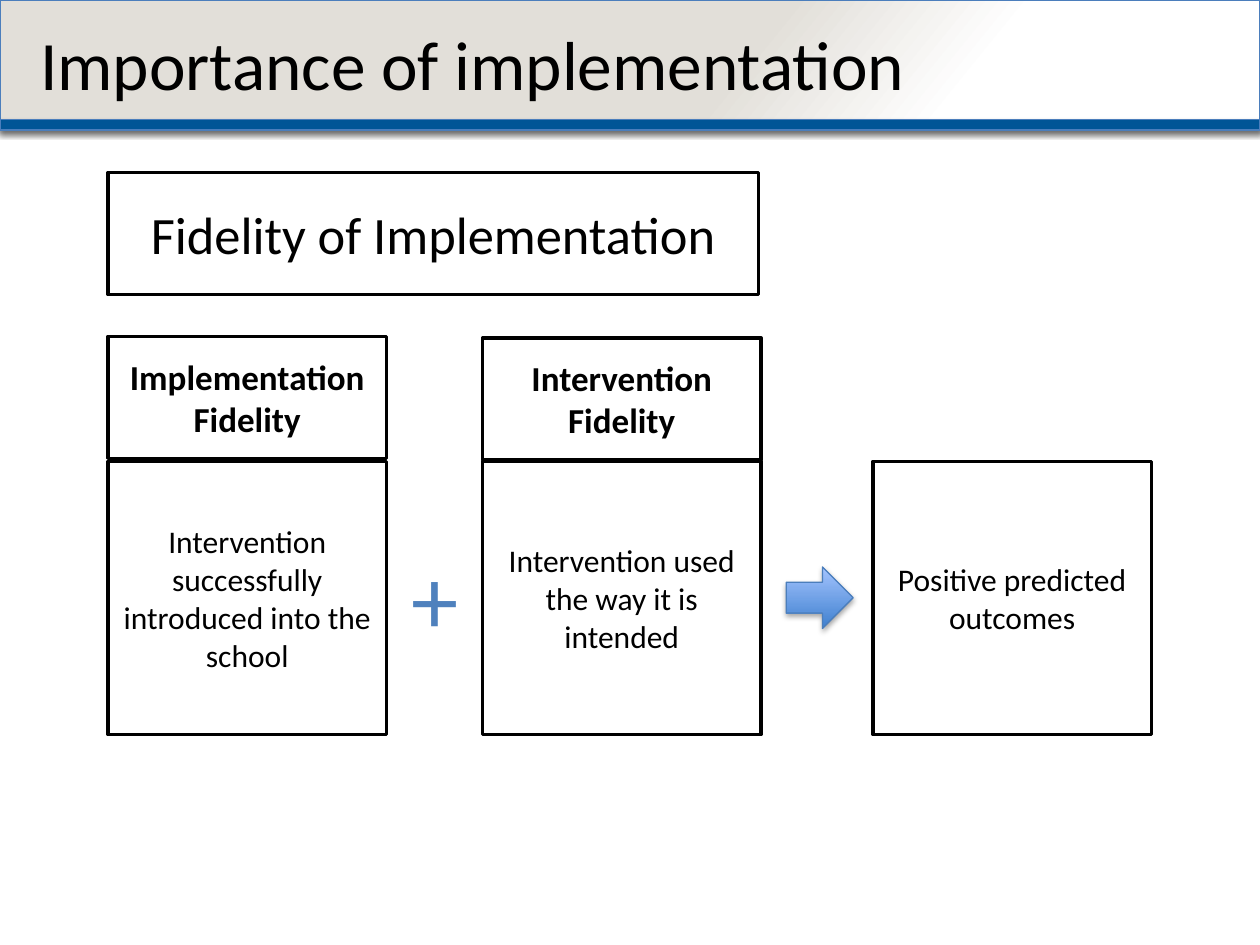
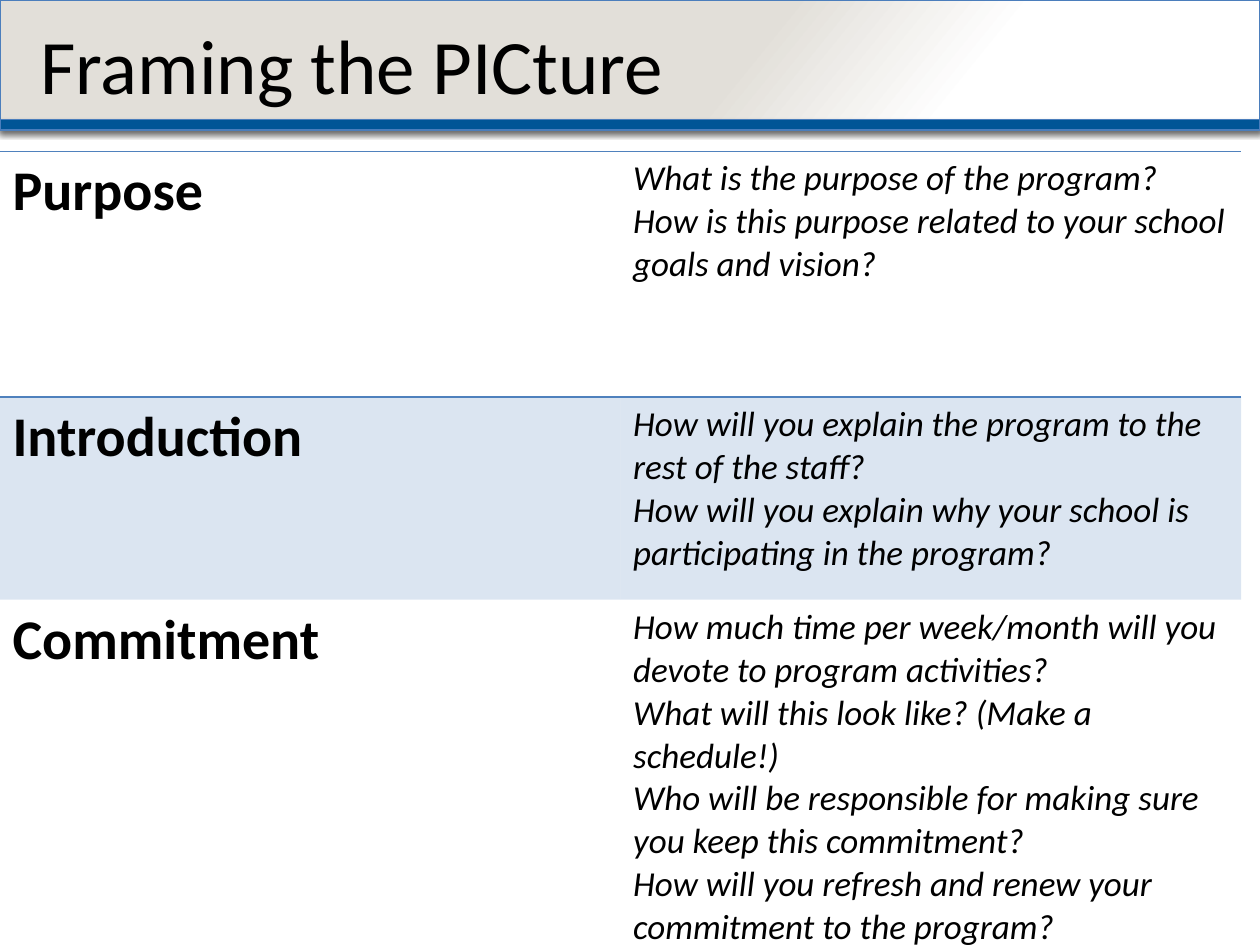
from dataclasses import dataclass

from lxml.etree import SubElement
from pptx import Presentation
from pptx.dml.color import RGBColor
from pptx.enum.shapes import MSO_SHAPE as Preset
from pptx.enum.text import MSO_ANCHOR as Anchor, PP_ALIGN as Align
from pptx.oxml import parse_xml
from pptx.oxml.ns import nsdecls, qn
from pptx.presentation import Presentation as Deck
from pptx.shapes.autoshape import Shape
from pptx.slide import Slide
from pptx.table import _Cell as Cell
from pptx.text.text import TextFrame
from pptx.util import Cm, Pt

FONT = "Calibri"
BLACK = RGBColor(0x00, 0x00, 0x00)
WHITE = RGBColor(0xFF, 0xFF, 0xFF)
SAND = RGBColor(0xE2, 0xDF, 0xD9)
BAND_BLUE = RGBColor(0x00, 0x55, 0x96)
EDGE_BLUE = RGBColor(0x4B, 0x7E, 0xBC)
ACCENT = RGBColor(0x4F, 0x81, 0xBD)
ARROW_DARK = RGBColor(0x3F, 0x80, 0xCE)
ARROW_LIGHT = RGBColor(0xA4, 0xC4, 0xFF)

PAGE_WIDTH, PAGE_HEIGHT = 25.4, 19.05
LEFT, MIDDLE, RIGHT = 2.18, 9.73, 17.6
CARD_WIDTH, CARD_HEIGHT, HEADING_HEIGHT = 5.61, 5.51, 2.46
HEADING_TOP, CARD_TOP = 6.78, 9.3
NO_GRID_STYLE = "{2D5ABB26-0587-4C30-8999-92F81FD0307C}"


@dataclass(frozen=True)
class Place:
    """Position and size in centimetres."""

    left: float
    top: float
    width: float
    height: float

    def lengths(self) -> tuple[Cm, ...]:
        """Return the four lengths in the order python-pptx takes them."""
        return tuple(Cm(n) for n in (self.left, self.top, self.width, self.height))


@dataclass(frozen=True)
class Card:
    """Outlined box with centred text."""

    text: str
    place: Place
    size: float = 18
    bold: bool = False


@dataclass(frozen=True)
class Topic:
    """Table row with a heading and its questions."""

    name: str
    height: float
    questions: tuple[str, ...]
    tinted: bool = False


CARDS = (
    Card("Fidelity of Implementation", Place(LEFT, 3.48, 13.11, HEADING_HEIGHT), 30),
    Card("Intervention successfully introduced into the school",
         Place(LEFT, CARD_TOP, CARD_WIDTH, CARD_HEIGHT)),
    Card("Intervention used the way it is intended",
         Place(MIDDLE, CARD_TOP, CARD_WIDTH, CARD_HEIGHT)),
    Card("Positive predicted outcomes",
         Place(RIGHT, CARD_TOP, CARD_WIDTH, CARD_HEIGHT)),
    Card("Implementation Fidelity",
         Place(LEFT, HEADING_TOP, CARD_WIDTH, HEADING_HEIGHT), 20, True),
    Card("Intervention Fidelity",
         Place(MIDDLE, HEADING_TOP + 0.03, CARD_WIDTH, HEADING_HEIGHT), 20, True),
)

TOPICS = (
    Topic("Purpose", 4.95, (
        "What is the purpose of the program?",
        "How is this purpose related to your school goals and vision?",
    )),
    Topic("Introduction", 4.09, (
        "How will you explain the program to the rest of the staff?",
        "How will you explain why your school is participating in the program?",
    ), tinted=True),
    Topic("Commitment", 6.1, (
        "How much time per week/month will you devote to program activities?",
        "What will this look like? (Make a schedule!)",
        "Who will be responsible for making sure you keep this commitment?",
        "How will you refresh and renew your commitment to the program?",
    )),
)


def write(frame: TextFrame, *texts: str, size: float, bold: bool = False,
          italic: bool = False, color: RGBColor = BLACK,
          align: Align = Align.LEFT) -> None:
    """Fill a text frame with one paragraph for each text."""
    for index, text in enumerate(texts):
        para = frame.add_paragraph() if index else frame.paragraphs[0]
        para.alignment = align
        span = para.add_run()
        span.text = text
        span.font.name = FONT
        span.font.size = Pt(size)
        span.font.bold = bold
        span.font.italic = italic
        span.font.color.rgb = color


def add_box(page: Slide, place: Place, fill: RGBColor = WHITE,
            edge: RGBColor = BLACK, weight: float = 2,
            preset: Preset = Preset.RECTANGLE) -> Shape:
    """Add a filled, outlined shape without shadow."""
    box = page.shapes.add_shape(preset, *place.lengths())
    box.shadow.inherit = False
    box.fill.solid()
    box.fill.fore_color.rgb = fill
    box.line.color.rgb = edge
    box.line.width = Pt(weight)
    return box


def add_raised_box(page: Slide, place: Place, fill: RGBColor,
                   preset: Preset = Preset.RECTANGLE) -> Shape:
    """Add a thinly edged shape with a soft shadow below it."""
    box = add_box(page, place, fill, EDGE_BLUE, 0.75, preset)
    effects = box._element.spPr.find(qn("a:effectLst"))
    shadow = SubElement(effects, qn("a:outerShdw"), blurRad="40000", dist="23000",
                        dir="5400000", rotWithShape="0")
    tone = SubElement(shadow, qn("a:srgbClr"), val=str(BLACK))
    SubElement(tone, qn("a:alpha"), val="35000")
    return box


def set_gradient(box: Shape, angle: float, *stops: tuple[float, RGBColor]) -> None:
    """Give a shape a two-stop gradient, its angle counted anticlockwise."""
    box.fill.gradient()
    box.fill.gradient_angle = angle
    for stop, (position, color) in zip(box.fill.gradient_stops, stops):
        stop.position = position
        stop.color.rgb = color


def add_text(page: Slide, place: Place, text: str, *, size: float,
             color: RGBColor = BLACK, align: Align = Align.LEFT,
             anchor: Anchor = Anchor.TOP, wrap: bool = True) -> None:
    """Add a text box."""
    frame = page.shapes.add_textbox(*place.lengths()).text_frame
    frame.word_wrap = wrap
    frame.vertical_anchor = anchor
    write(frame, text, size=size, color=color, align=align)


def add_page(deck: Deck, title: str, title_size: float) -> Slide:
    """Add a blank slide with the header band and title."""
    page = deck.slides.add_slide(deck.slide_layouts[6])
    header = add_raised_box(page, Place(0, 0, PAGE_WIDTH, 2.62), SAND)
    set_gradient(header, 141, (0.24, WHITE), (0.42, SAND))
    add_raised_box(page, Place(0, 2.41, PAGE_WIDTH, 0.21), BAND_BLUE)
    add_text(page, Place(0.56, 0.13, 19.84, 2.29), title, size=title_size,
             anchor=Anchor.MIDDLE)
    return page


def add_card(page: Slide, card: Card) -> None:
    """Draw a card."""
    frame = add_box(page, card.place).text_frame
    frame.word_wrap = True
    frame.vertical_anchor = Anchor.MIDDLE
    write(frame, card.text, size=card.size, bold=card.bold, align=Align.CENTER)


def add_border(cell: Cell, side: str) -> None:
    """Draw an accent line on the side T or B of a cell."""
    cell._tc.get_or_add_tcPr().append(parse_xml(
        f'<a:ln{side} {nsdecls("a")} w="12700"><a:solidFill>'
        f'<a:srgbClr val="{ACCENT}"/></a:solidFill></a:ln{side}>'))


def style_cell(cell: Cell, borders: str, tinted: bool) -> None:
    """Set the borders and then the fill of a cell."""
    for side in borders:
        add_border(cell, side)
    if not tinted:
        cell.fill.background()
        return
    cell.fill.solid()
    cell.fill.fore_color.rgb = ACCENT
    tone = cell._tc.tcPr.find(f".//{qn('a:srgbClr')}")
    SubElement(tone, qn("a:alpha"), val="20000")


def add_topic_table(page: Slide) -> None:
    """Add the table of topics and questions."""
    place = Place(0, 3.05, 25.02, sum(topic.height for topic in TOPICS))
    table = page.shapes.add_table(len(TOPICS), 2, *place.lengths()).table
    table.first_row = table.horz_banding = False
    table._tbl.tblPr.find(qn("a:tableStyleId")).text = NO_GRID_STYLE
    for row, topic, borders in zip(table.rows, TOPICS, ("TB", "", "B")):
        row.height = Cm(topic.height)
        name, questions = row.cells
        write(name.text_frame, topic.name, size=32, bold=True)
        write(questions.text_frame, *topic.questions, size=20, italic=True)
        for cell in (name, questions):
            style_cell(cell, borders, topic.tinted)


def build_importance(deck: Deck) -> None:
    """Build the slide on the two kinds of fidelity."""
    page = add_page(deck, "Importance of implementation", 39.6)
    for card in CARDS:
        add_card(page, card)
    add_text(page, Place(8.03, 10.77, 1.47, 2.57), "+", size=54, color=ACCENT,
             align=Align.CENTER, wrap=False)
    arrow = add_raised_box(page, Place(15.85, 11.43, 1.35, 1.24), ARROW_DARK,
                           Preset.RIGHT_ARROW)
    set_gradient(arrow, 90, (0, ARROW_DARK), (1, ARROW_LIGHT))


def build_framing(deck: Deck) -> None:
    """Build the slide with the table of questions."""
    add_topic_table(add_page(deck, "Framing the PICture", 44))


def main() -> None:
    """Build and save the deck."""
    deck = Presentation()
    deck.slide_width, deck.slide_height = Cm(PAGE_WIDTH), Cm(PAGE_HEIGHT)
    build_importance(deck)
    build_framing(deck)
    deck.save("out.pptx")


if __name__ == "__main__":
    main()
